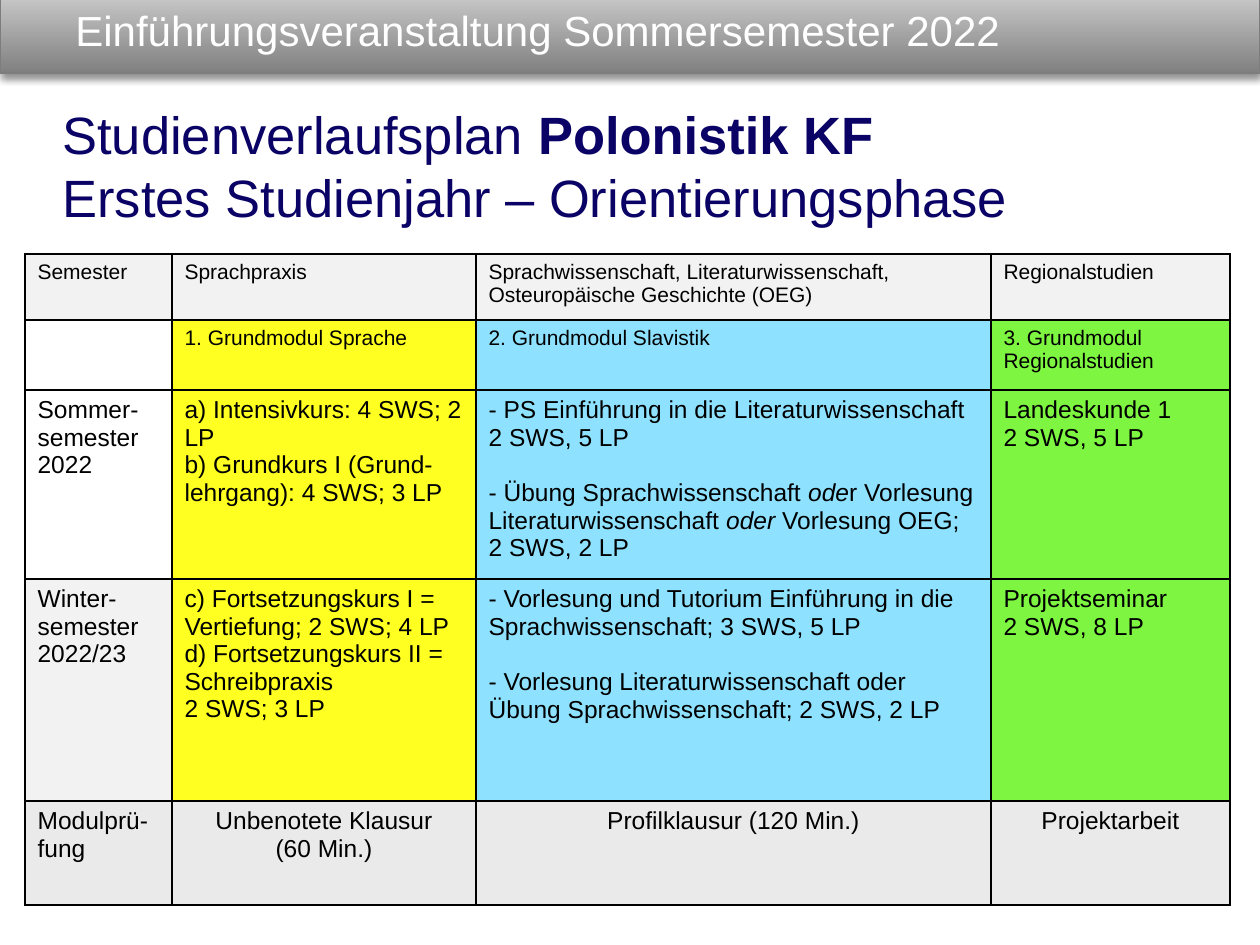
"""Build the Polonistik KF first-year study plan slide."""

from dataclasses import dataclass

from lxml import etree
from pptx import Presentation
from pptx.dml.color import RGBColor
from pptx.enum.shapes import MSO_SHAPE
from pptx.enum.text import MSO_ANCHOR, PP_ALIGN
from pptx.oxml.ns import qn
from pptx.util import Emu, Pt

RECTANGLE = MSO_SHAPE.RECTANGLE
MIDDLE, TOP = MSO_ANCHOR.MIDDLE, MSO_ANCHOR.TOP
LEFT, CENTER = PP_ALIGN.LEFT, PP_ALIGN.CENTER
PIXELS_PER_INCH = 126
FONT = "Arial"
COLORS = {
    "black": "000000",
    "white": "FFFFFF",
    "navy": "0A0365",
    "bar_dark": "808080",
    "bar_light": "CDCDCD",
    "bar_line": "7D7D7D",
    "header": "F2F2F2",
    "exam": "EAEAEA",
    "language": "FFFF21",
    "slavistics": "8FE2FF",
    "regional": "7DF541",
}
COLUMN_WIDTHS = (147, 304, 515, 239)
ROW_HEIGHTS = (66, 70, 189, 222, 104)
BLANK_LINE = 16


@dataclass(frozen=True)
class Span:
    text: str
    bold: bool = False
    italic: bool = False


@dataclass(frozen=True)
class Line:
    spans: tuple[Span, ...]
    space_before: int = 0


@dataclass(frozen=True)
class Style:
    size: int
    color: str
    align: PP_ALIGN = LEFT


@dataclass(frozen=True)
class Entry:
    lines: tuple[Line, ...] = ()
    fill: str | None = None


@dataclass(frozen=True)
class Row:
    entries: tuple[Entry, ...]
    size: int = 14
    body_align: PP_ALIGN = LEFT


def line(*parts: str | Span, space_before: int = 0) -> Line:
    """Make a line from plain strings and styled spans."""
    spans = tuple(Span(part) if isinstance(part, str) else part for part in parts)
    return Line(spans, space_before)


def entry(fill: str | None, *lines: str | Line) -> Entry:
    """Make a table entry from plain strings and lines."""
    return Entry(tuple(line(item) if isinstance(item, str) else item for item in lines), fill)


ROWS = (
    Row((
        entry("header", "Semester"),
        entry("header", "Sprachpraxis"),
        entry("header", "Sprachwissenschaft, Literaturwissenschaft, Osteuropäische Geschichte (OEG)"),
        entry("header", "Regionalstudien"),
    ), size=12),
    Row((
        entry(None),
        entry("language", "1. Grundmodul Sprache"),
        entry("slavistics", "2. Grundmodul Slavistik"),
        entry("regional", "3. Grundmodul Regionalstudien"),
    ), size=12),
    Row((
        entry(None, "Sommer-semester 2022"),
        entry("language", "a) Intensivkurs: 4 SWS; 2 LP", "b) Grundkurs I (Grund-lehrgang): 4 SWS; 3 LP"),
        entry(
            "slavistics",
            "- PS Einführung in die Literaturwissenschaft 2 SWS, 5 LP",
            line(
                "- Übung Sprachwissenschaft ", Span("ode", italic=True),
                "r Vorlesung Literaturwissenschaft ", Span("oder", italic=True),
                " Vorlesung OEG;", space_before=BLANK_LINE,
            ),
            "2 SWS, 2 LP",
        ),
        entry("regional", "Landeskunde 1", "2 SWS, 5 LP"),
    )),
    Row((
        entry("header", "Winter-semester 2022/23"),
        entry(
            "language",
            "c) Fortsetzungskurs I = Vertiefung; 2 SWS; 4 LP",
            "d) Fortsetzungskurs II = Schreibpraxis",
            "2 SWS; 3 LP",
        ),
        entry(
            "slavistics",
            "- Vorlesung und Tutorium Einführung in die",
            "Sprachwissenschaft; 3 SWS, 5 LP",
            line(
                "- Vorlesung Literaturwissenschaft oder Übung Sprachwissenschaft; 2 SWS, 2 LP",
                space_before=BLANK_LINE,
            ),
        ),
        entry("regional", "Projektseminar", "2 SWS, 8 LP"),
    )),
    Row((
        entry("exam", "Modulprü-fung"),
        entry("exam", "Unbenotete Klausur", "(60 Min.)"),
        entry("exam", "Profilklausur (120 Min.)"),
        entry("exam", "Projektarbeit"),
    ), body_align=CENTER),
)


def px(length: int) -> Emu:
    """Turn pixels into EMU."""
    return Emu(round(length * 914400 / PIXELS_PER_INCH))


def rgb(name: str) -> RGBColor:
    """Look up a named colour."""
    return RGBColor.from_string(COLORS[name])


def write_lines(text_frame, lines: tuple[Line, ...], style: Style) -> None:
    """Write styled lines as paragraphs."""
    for index, item in enumerate(lines):
        paragraph = text_frame.add_paragraph() if index else text_frame.paragraphs[0]
        paragraph.alignment = style.align
        if item.space_before:
            paragraph.space_before = Pt(item.space_before)
        paragraph.font.name = FONT
        paragraph.font.size = Pt(style.size)
        paragraph.font.color.rgb = rgb(style.color)
        for span in item.spans:
            run = paragraph.add_run()
            run.text = span.text
            if span.bold:
                run.font.bold = True
            if span.italic:
                run.font.italic = True


def add_bar(slide) -> None:
    """Draw the shaded bar across the top."""
    bar = slide.shapes.add_shape(RECTANGLE, 0, px(-10), px(1260), px(83))
    bar.fill.gradient()
    bar.fill.gradient_angle = 90
    for stop, color in zip(bar.fill.gradient_stops, ("bar_dark", "bar_light")):
        stop.color.rgb = rgb(color)
        stop.position = 0 if color == "bar_dark" else 1
    bar.line.color.rgb = rgb("bar_line")
    bar.line.width = Pt(0.75)
    bar.shadow.inherit = False
    effects = bar._element.spPr.find(qn("a:effectLst"))
    shadow = etree.SubElement(
        effects, qn("a:outerShdw"), blurRad=str(Pt(4)), dist=str(Pt(3)), dir="5400000", rotWithShape="0"
    )
    color = etree.SubElement(shadow, qn("a:srgbClr"), val=COLORS["black"])
    etree.SubElement(color, qn("a:alpha"), val="43000")


def add_text(slide, box: tuple[int, ...], lines: tuple[Line, ...], style: Style, anchor: MSO_ANCHOR) -> None:
    """Add a wrapping text box."""
    text_frame = slide.shapes.add_textbox(*map(px, box)).text_frame
    text_frame.word_wrap = True
    text_frame.vertical_anchor = anchor
    write_lines(text_frame, lines, style)


def add_borders(cell) -> None:
    """Outline a cell in black."""
    properties = cell._tc.get_or_add_tcPr()
    for index, side in enumerate(("lnL", "lnR", "lnT", "lnB")):
        border = etree.Element(qn(f"a:{side}"), w=str(Pt(1)))
        fill = etree.SubElement(border, qn("a:solidFill"))
        etree.SubElement(fill, qn("a:srgbClr"), val=COLORS["black"])
        properties.insert(index, border)


def add_plan(slide) -> None:
    """Add the study plan table."""
    table = slide.shapes.add_table(
        len(ROWS), len(COLUMN_WIDTHS), px(25), px(254), px(sum(COLUMN_WIDTHS)), px(sum(ROW_HEIGHTS))
    ).table
    table.first_row = table.horz_banding = False
    for column, width in zip(table.columns, COLUMN_WIDTHS):
        column.width = px(width)
    for table_row, height, row in zip(table.rows, ROW_HEIGHTS, ROWS):
        table_row.height = px(height)
        for index, (cell, item) in enumerate(zip(table_row.cells, row.entries)):
            if item.fill:
                cell.fill.solid()
                cell.fill.fore_color.rgb = rgb(item.fill)
            else:
                cell.fill.background()
            add_borders(cell)
            align = row.body_align if index else LEFT
            write_lines(cell.text_frame, item.lines, Style(row.size, "black", align))


def main() -> None:
    """Build and save the slide."""
    presentation = Presentation()
    presentation.slide_width, presentation.slide_height = px(1260), px(945)
    slide = presentation.slides.add_slide(presentation.slide_layouts[6])
    add_bar(slide)
    title = (line("Einführungsveranstaltung Sommersemester 2022"),)
    add_text(slide, (63, 0, 1168, 60), title, Style(24, "white"), MIDDLE)
    heading = (
        line("Studienverlaufsplan ", Span("Polonistik KF", bold=True)),
        line("Erstes Studienjahr – Orientierungsphase"),
    )
    add_text(slide, (50, 96, 1181, 139), heading, Style(30, "navy"), TOP)
    add_plan(slide)
    presentation.save("out.pptx")


if __name__ == "__main__":
    main()
